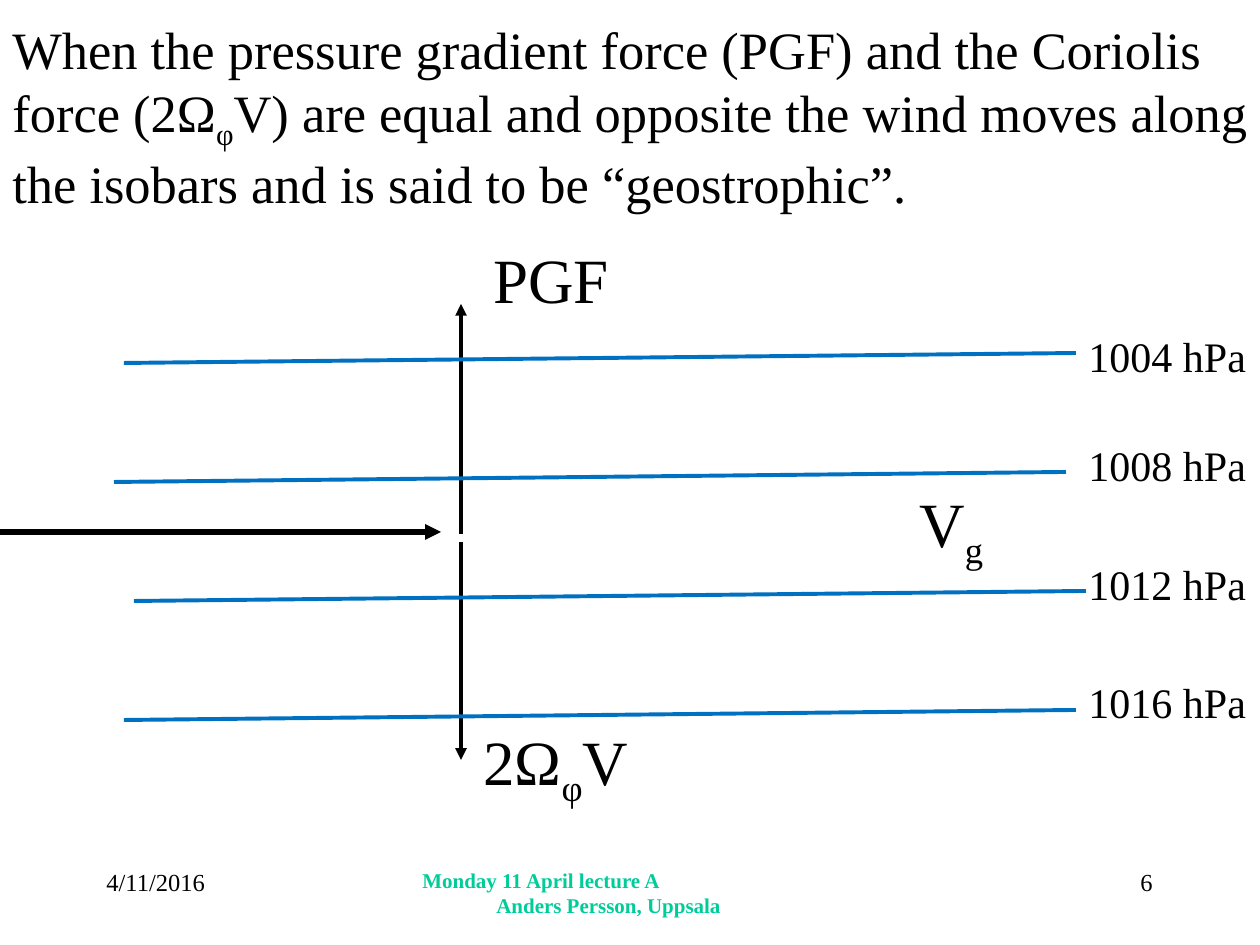
from lxml import etree
from pptx import Presentation
from pptx.dml.color import RGBColor
from pptx.enum.shapes import MSO_CONNECTOR
from pptx.enum.text import MSO_ANCHOR, MSO_AUTO_SIZE, PP_ALIGN
from pptx.oxml.ns import qn
from pptx.util import Pt

STRAIGHT = MSO_CONNECTOR.STRAIGHT
TOP, MIDDLE = MSO_ANCHOR.TOP, MSO_ANCHOR.MIDDLE
LEFT, RIGHT = PP_ALIGN.LEFT, PP_ALIGN.RIGHT
FIT_SHAPE = MSO_AUTO_SIZE.SHAPE_TO_FIT_TEXT
EMU_PER_PX = 914400 / 126
BLACK, BLUE, GREEN = "000000", "0070C0", "00CC99"

STATEMENT = (
    "When the pressure gradient force (PGF) and the Coriolis force (2Ω_φ_V) "
    "are equal and opposite the wind moves along the isobars and is said to be “geostrophic”."
)
FORCE_ARROWS = [
    ((461, 534), (461, 304), 2.25, None),
    ((-15, 532), (441, 532), 3, "oval"),
    ((461, 542), (461, 760), 2.25, None),
]
FORCE_LABELS = [
    ("V_g", (907, 483, 92, 89)),
    ("PGF", (481, 234, 142, 89)),
    ("2Ω_φ_V", (471, 721, 176, 89)),
]
ISOBARS = [
    ("1004 hPa", 124, 324),
    ("1008 hPa", 114, 433),
    ("1012 hPa", 134, 552),
    ("1016 hPa", 124, 670),
]
ISOBAR_TOP, ISOBAR_STEP, ISOBAR_LENGTH, ISOBAR_RISE = 363, 119, 952, 10
LECTURE = "Monday 11 April lecture A\vAnders Persson, Uppsala"
AUTHOR_INDENT = 74


def px(length):
    return round(length * EMU_PER_PX)


def rgb(code):
    return RGBColor.from_string(code)


def add_text(slide, content, place, size, color=BLACK, bold=False,
             align=LEFT, anchor=TOP, wrap=True):
    box = slide.shapes.add_textbox(*map(px, place))
    frame = box.text_frame
    frame.word_wrap = wrap
    frame.vertical_anchor = anchor
    if not wrap:
        frame.auto_size = FIT_SHAPE
    paragraph = frame.paragraphs[0]
    paragraph.alignment = align
    font = paragraph.font
    font.name, font.size, font.bold = "Times New Roman", Pt(size), bold
    font.color.rgb = rgb(color)
    for index, line in enumerate(content.split("\v")):
        if index:
            paragraph.add_line_break()
        for position, part in enumerate(line.split("_")):
            run = paragraph.add_run()
            run.text = part
            if position % 2:
                run._r.get_or_add_rPr().set("baseline", "-25000")
    return paragraph


def add_line(slide, start, end, color, width, head=None, tail=None):
    line = slide.shapes.add_connector(STRAIGHT, *map(px, start + end))
    line.line.color.rgb = rgb(color)
    line.line.width = Pt(width)
    outline = line.line._get_or_add_ln()
    for tag, kind in (("a:headEnd", head), ("a:tailEnd", tail)):
        if kind:
            etree.SubElement(outline, qn(tag), type=kind)
    etree.SubElement(line._element.spPr, qn("a:effectLst"))


def main():
    deck = Presentation()
    deck.slide_width, deck.slide_height = px(1260), px(945)
    slide = deck.slides.add_slide(deck.slide_layouts[6])

    add_text(slide, STATEMENT, (0, 26, 1295, 179), 30, anchor=MIDDLE)
    for start, end, width, head in FORCE_ARROWS:
        add_line(slide, start, end, BLACK, width, head, "triangle")
    for label, place in FORCE_LABELS:
        add_text(slide, label, place, 36, anchor=MIDDLE, wrap=False)

    for row, (pressure, left, label_top) in enumerate(ISOBARS):
        y = ISOBAR_TOP + row * ISOBAR_STEP
        add_line(slide, (left, y), (left + ISOBAR_LENGTH, y - ISOBAR_RISE), BLUE, 2.25)
        add_text(slide, pressure, (1076, label_top, 184, 63), 24, wrap=False)

    add_text(slide, "4/11/2016", (94, 861, 262, 63), 14)
    add_text(slide, "6", (903, 861, 262, 63), 14, align=RIGHT)
    lecture = add_text(slide, LECTURE, (410, 861, 431, 63), 12, GREEN, bold=True)
    hanging = lecture._p.get_or_add_pPr()
    hanging.set("marL", str(px(AUTHOR_INDENT)))
    hanging.set("indent", str(-px(AUTHOR_INDENT)))

    deck.save("out.pptx")


if __name__ == "__main__":
    main()
